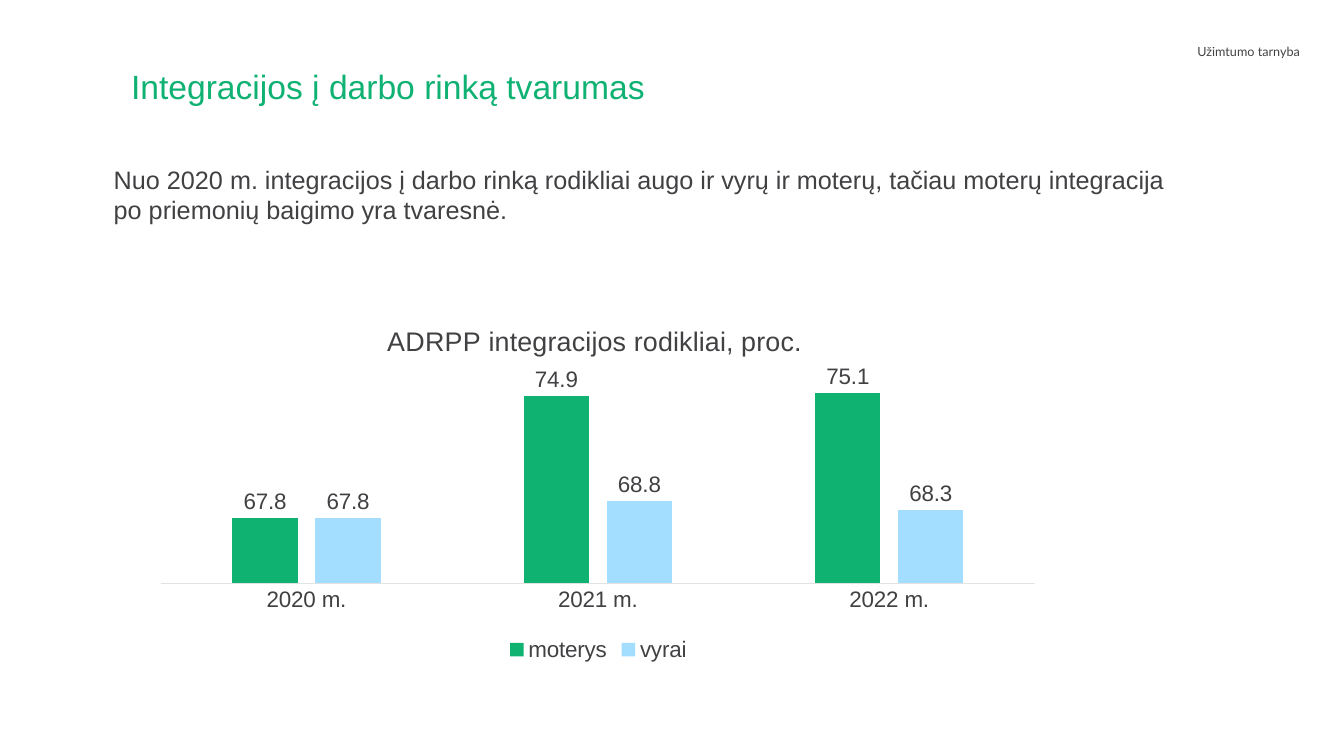
from dataclasses import dataclass

from lxml.etree import SubElement as Sub
from pptx import Presentation
from pptx.chart.chart import Chart
from pptx.chart.data import CategoryChartData as Data
from pptx.dml.color import RGBColor as Color
from pptx.enum.chart import XL_CHART_TYPE as Kind
from pptx.enum.chart import XL_LABEL_POSITION as Spot
from pptx.enum.chart import XL_LEGEND_POSITION as Side
from pptx.enum.chart import XL_TICK_MARK as Tick
from pptx.enum.text import MSO_ANCHOR as Anchor
from pptx.enum.text import MSO_AUTO_SIZE as Fit
from pptx.enum.text import PP_ALIGN as Align
from pptx.oxml.ns import qn
from pptx.util import Emu, Pt

PX = 9144
GREEN = Color(0x0F, 0xB2, 0x73)
LEAF = Color(0x0F, 0xB2, 0x71)
SKY = Color(0xA3, 0xDD, 0xFF)
INK = Color(0x41, 0x41, 0x44)
GREY = Color(0x43, 0x42, 0x44)
RULE = Color(0xE2, 0xE2, 0xE3)


@dataclass
class Box:
    left: int
    top: int
    width: int
    height: int

    def emu(self) -> list[Emu]:
        return [Emu(n * PX) for n in (self.left, self.top, self.width, self.height)]


@dataclass
class Label:
    text: str
    box: Box
    size: int
    color: Color
    face: str = "Arial"
    align: Align = Align.LEFT
    after: int = 0
    line: float = 1.0


@dataclass
class Group:
    name: str
    rates: list[float]
    color: Color


TITLE = Label("Integracijos į darbo rinką tvarumas", Box(120, 65, 1127, 56),
              24, GREEN, line=0.9)
NOTES = [
    Label("Užimtumo tarnyba", Box(849, 39, 450, 47), 9, GREY, "Lato", Align.RIGHT),
    Label("Nuo 2020 m. integracijos į darbo rinką rodikliai augo ir vyrų ir moterų, "
          "tačiau moterų integracija po priemonių baigimo yra tvaresnė.",
          Box(103, 158, 1067, 71), 18, INK, after=12),
]
YEARS = ["2020 m.", "2021 m.", "2022 m."]
GROUPS = [
    Group("moterys", [67.8, 74.9, 75.1], LEAF),
    Group("vyrai", [67.8, 68.8, 68.3], SKY),
]
HEAD = "ADRPP integracijos rodikliai, proc."


def style(font, size: float, color: Color, face: str = "Arial") -> None:
    font.size = Pt(size)
    font.name = face
    font.bold = False
    font.color.rgb = color


def write(shape, label: Label) -> None:
    shape.left, shape.top, shape.width, shape.height = label.box.emu()
    frame = shape.text_frame
    frame.text = label.text
    frame.word_wrap = True
    frame.auto_size = Fit.NONE
    frame.vertical_anchor = Anchor.TOP
    para = frame.paragraphs[0]
    para.alignment = label.align
    para.line_spacing = label.line
    para.space_before = Pt(0)
    para.space_after = Pt(label.after)
    style(para.runs[0].font, label.size, label.color, label.face)


def place(layout, **parts: str | float) -> None:
    for old in layout.findall(qn("c:manualLayout")):
        layout.remove(old)
    manual = Sub(layout, qn("c:manualLayout"))
    for key, value in parts.items():
        Sub(manual, qn(f"c:{key}")).set("val", str(value))


def add_title(chart: Chart) -> None:
    title = chart.chart_title
    title.include_in_layout = False
    frame = title.text_frame
    frame.text = HEAD
    style(frame.paragraphs[0].runs[0].font, 19.2, INK)
    root = chart.element.find(f".//{qn('c:title')}")
    place(root.get_or_add_layout() if hasattr(root, "get_or_add_layout")
          else root.find(qn("c:layout")),
          xMode="edge", yMode="edge", x=0.26, y=0.05)


def add_axes(chart: Chart) -> None:
    years = chart.category_axis
    years.major_tick_mark = Tick.NONE
    years.minor_tick_mark = Tick.NONE
    years.format.line.color.rgb = RULE
    years.format.line.width = Pt(0.75)
    style(years.tick_labels.font, 16, INK)
    rates = chart.value_axis
    rates.minimum_scale = 64
    rates.maximum_scale = 76
    rates.has_major_gridlines = False
    rates.visible = False


def add_bars(chart: Chart) -> None:
    plot = chart.plots[0]
    plot.gap_width = 219
    plot.overlap = -27
    plot.vary_by_categories = False
    for bars, group in zip(plot.series, GROUPS):
        bars.format.fill.solid()
        bars.format.fill.fore_color.rgb = group.color
        bars.invert_if_negative = False
        labels = bars.data_labels
        labels.show_value = True
        labels.position = Spot.OUTSIDE_END
        labels.number_format = "0.0"
        labels.number_format_is_linked = False
        style(labels.font, 16, INK)


def add_chart(slide, box: Box) -> None:
    data = Data(number_format="0.0")
    data.categories = YEARS
    for group in GROUPS:
        data.add_series(group.name, group.rates)
    chart = slide.shapes.add_chart(Kind.COLUMN_CLUSTERED, *box.emu(), data).chart
    style(chart.font, 16, INK, "Calibri")
    add_title(chart)
    add_axes(chart)
    add_bars(chart)
    chart.has_legend = True
    chart.legend.position = Side.BOTTOM
    chart.legend.include_in_layout = False
    style(chart.legend.font, 16, INK)
    area = chart.element.find(f".//{qn('c:plotArea')}")
    layout = area.find(qn("c:layout"))
    if layout is None:
        layout = Sub(area, qn("c:layout"))
        area.insert(0, layout)
    place(layout, layoutTarget="inner", xMode="edge", yMode="edge",
          x=0.014, y=0.21, w=0.971, h=0.564)


def main() -> None:
    deck = Presentation()
    deck.slide_width, deck.slide_height = Emu(1333 * PX), Emu(750 * PX)
    slide = deck.slides.add_slide(deck.slide_layouts[5])
    write(slide.shapes.title, TITLE)
    for note in NOTES:
        write(slide.shapes.add_textbox(*note.box.emu()), note)
    add_chart(slide, Box(147, 298, 893, 363))
    deck.save("out.pptx")


if __name__ == "__main__":
    main()
